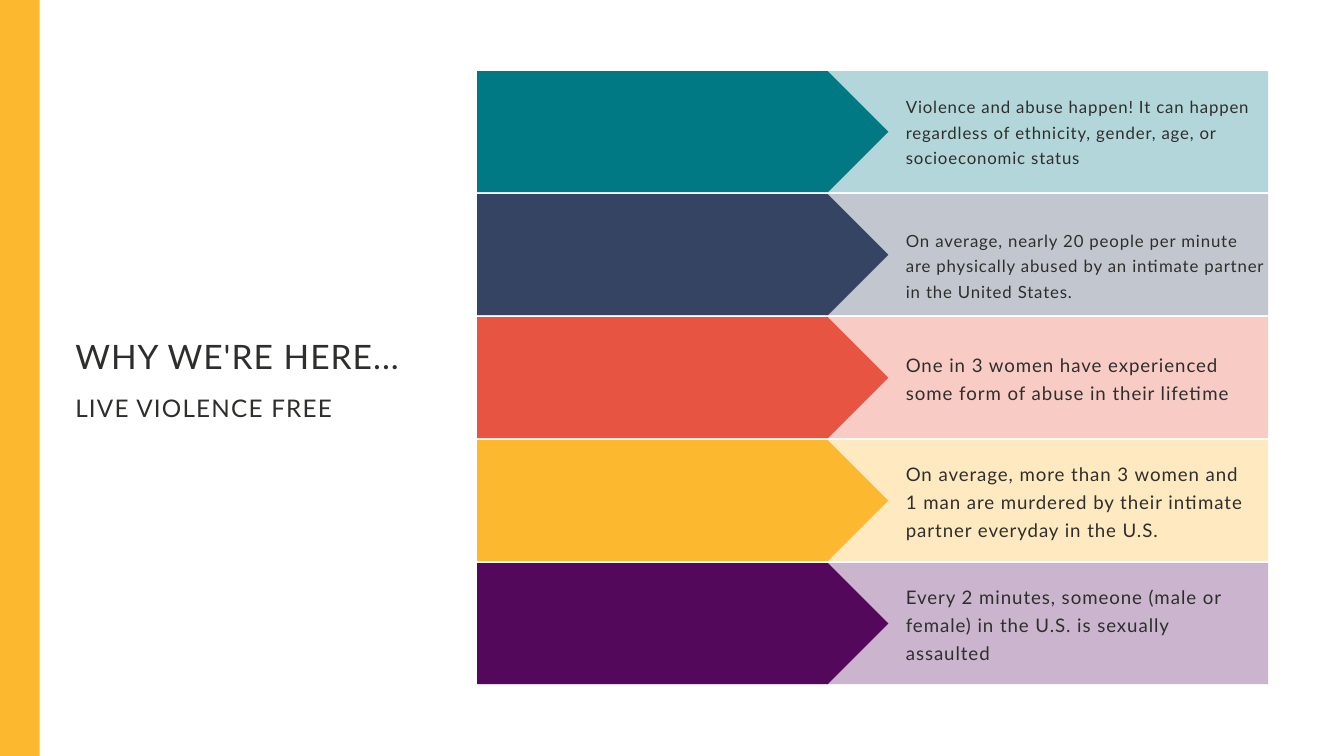
from lxml.etree import SubElement
from pptx import Presentation
from pptx.dml.color import RGBColor
from pptx.enum.shapes import MSO_SHAPE
from pptx.oxml.ns import qn
from pptx.util import Inches, Pt

COLORS = {
    "ink": "2E2F2C",
    "teal": "007985",
    "navy": "354463",
    "coral": "E85442",
    "amber": "FCB82F",
    "purple": "54085B",
}

FACTS = [
    ("teal", 18, 1.37, 5.13, 1.11,
     "Violence and abuse happen! It can happen regardless of ethnicity, "
     "gender, age, or socioeconomic status"),
    ("navy", 18, 3.36, 5.39, 1.1,
     "On average, nearly 20 people per minute are physically abused by an "
     "intimate partner in the United States."),
    ("coral", 20, 5.18, 5.13, 0.81,
     "One in 3 women have experienced some form of abuse in their lifetime"),
    ("amber", 20, 6.81, 5.13, 1.22,
     "On average, more than 3 women and 1 man are murdered by their intimate "
     "partner everyday in the U.S."),
    ("purple", 20, 8.64, 5.13, 1.22,
     "Every 2 minutes, someone (male or female) in the U.S. is sexually assaulted"),
]

ROW_LEFT, ROW_TOP, ROW_STEP = 7.1, 1.06, 1.83
ROW_WIDTH, ROW_HEIGHT = 11.77, 1.8
LABEL_WIDTH, TIP_WIDTH = 5.22, 0.9
FACT_LEFT = 13.48


class SlideBuilder:
    font = "Lato"

    def __init__(self, page):
        self.page = page

    def paint(self, shape, color, opacity=100):
        shape.shadow.inherit = False
        shape.fill.solid()
        shape.fill.fore_color.rgb = RGBColor.from_string(COLORS[color])
        shape.line.fill.background()
        if opacity < 100:
            tint = shape.fill._xPr.find(f"{qn('a:solidFill')}/{qn('a:srgbClr')}")
            SubElement(tint, qn("a:alpha"), val=str(opacity * 1000))

    def rectangle(self, left, top, width, height, color, opacity=100):
        shape = self.page.shapes.add_shape(
            MSO_SHAPE.RECTANGLE, Inches(left), Inches(top), Inches(width), Inches(height))
        self.paint(shape, color, opacity)

    def arrow_tip(self, left, top, width, height, color):
        outline = self.page.shapes.build_freeform(Inches(left), Inches(top))
        outline.add_line_segments([
            (Inches(left + width), Inches(top + height / 2)),
            (Inches(left), Inches(top + height)),
        ], close=True)
        self.paint(outline.convert_to_shape(), color)

    def text(self, left, top, width, height, words, size, leading, tracking):
        box = self.page.shapes.add_textbox(
            Inches(left), Inches(top), Inches(width), Inches(height))
        frame = box.text_frame
        frame.word_wrap = True
        frame.margin_left = frame.margin_right = 0
        frame.margin_top = frame.margin_bottom = 0
        para = frame.paragraphs[0]
        para.line_spacing = Pt(leading)
        para.font.name = self.font
        para.font.size = Pt(size)
        para.font.color.rgb = RGBColor.from_string(COLORS["ink"])
        span = para.add_run()
        span.text = words
        span._r.get_or_add_rPr().set("spc", str(round(tracking * 100)))


def main():
    deck = Presentation()
    deck.slide_width, deck.slide_height = Inches(20), Inches(11.25)
    builder = SlideBuilder(deck.slides.add_slide(deck.slide_layouts[6]))

    builder.text(1.12, 4.95, 4.98, 0.63, "WHY WE'RE HERE...", 36, 47.2, 1.1)
    builder.text(1.12, 5.78, 4.98, 0.48, "LIVE VIOLENCE FREE", 26, 36.4, 1.3)

    for index, (color, size, text_top, width, height, words) in enumerate(FACTS):
        top = ROW_TOP + index * ROW_STEP
        builder.rectangle(ROW_LEFT, top, ROW_WIDTH, ROW_HEIGHT, color, opacity=30)
        builder.text(FACT_LEFT, text_top, width, height, words, size, size * 1.5, size / 20)
        builder.rectangle(ROW_LEFT, top, LABEL_WIDTH, ROW_HEIGHT, color)
        builder.arrow_tip(ROW_LEFT + LABEL_WIDTH, top, TIP_WIDTH, ROW_HEIGHT, color)

    builder.rectangle(0, 0, 0.59, 11.25, "amber")
    deck.save("out.pptx")


if __name__ == "__main__":
    main()
